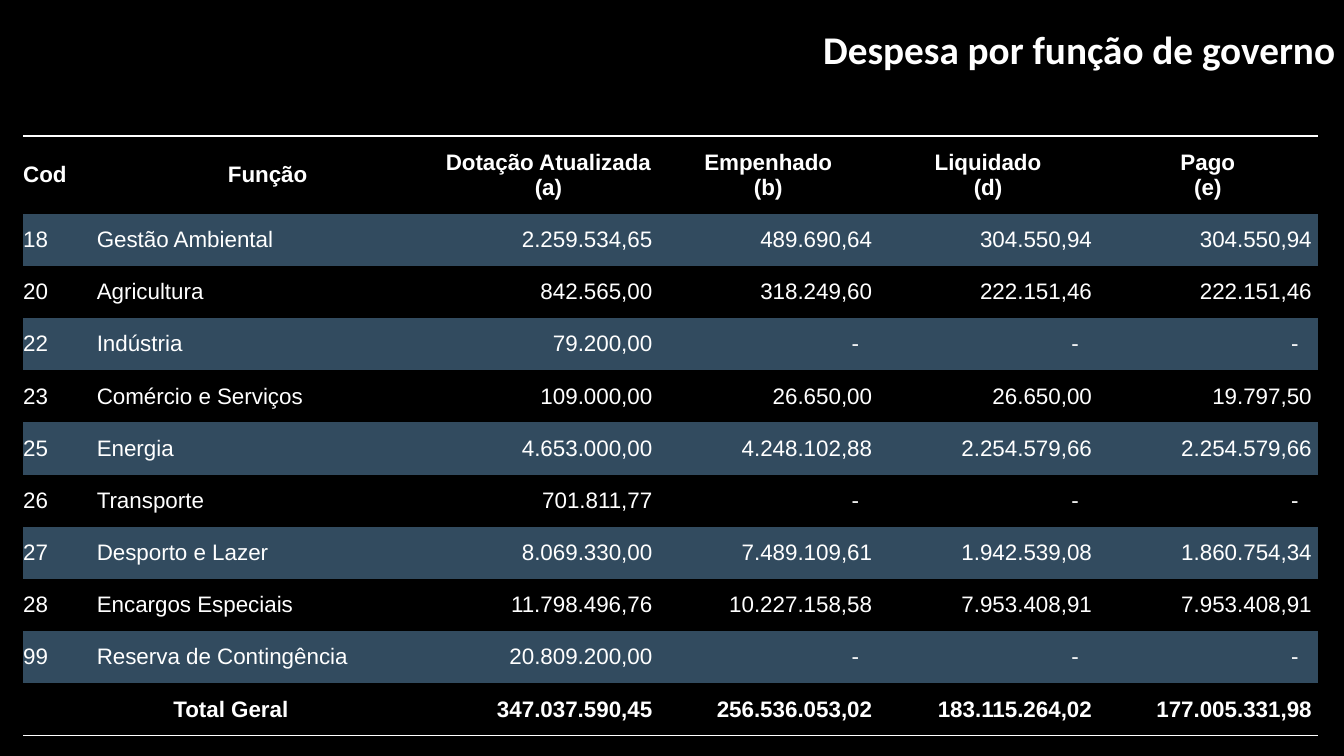
from dataclasses import dataclass

from lxml import etree
from pptx import Presentation
from pptx import util as u
from pptx.dml.color import RGBColor
from pptx.enum import text
from pptx.oxml.ns import qn

LEFT, CENTER, RIGHT = text.PP_ALIGN.LEFT, text.PP_ALIGN.CENTER, text.PP_ALIGN.RIGHT
NO_TABLE_STYLE = "{2D5ABB26-0587-4C30-8999-92F81FD0307C}"

HEADER = ["Cod", "Função", "Dotação Atualizada\n(a)", "Empenhado\n(b)",
          "Liquidado\n(d)", "Pago\n(e)"]
EXPENSES = [
    ["18", "Gestão Ambiental", "2.259.534,65", "489.690,64", "304.550,94", "304.550,94"],
    ["20", "Agricultura", "842.565,00", "318.249,60", "222.151,46", "222.151,46"],
    ["22", "Indústria", "79.200,00", "-", "-", "-"],
    ["23", "Comércio e Serviços", "109.000,00", "26.650,00", "26.650,00", "19.797,50"],
    ["25", "Energia", "4.653.000,00", "4.248.102,88", "2.254.579,66", "2.254.579,66"],
    ["26", "Transporte", "701.811,77", "-", "-", "-"],
    ["27", "Desporto e Lazer", "8.069.330,00", "7.489.109,61", "1.942.539,08",
     "1.860.754,34"],
    ["28", "Encargos Especiais", "11.798.496,76", "10.227.158,58", "7.953.408,91",
     "7.953.408,91"],
    ["99", "Reserva de Contingência", "20.809.200,00", "-", "-", "-"],
]
TOTAL = ["Total Geral", "", "347.037.590,45", "256.536.053,02", "183.115.264,02",
         "177.005.331,98"]
COLUMN_WIDTHS = [0.73, 3.39] + [2.18] * 4
ROW_HEIGHTS = [0.77] + [0.518] * (len(EXPENSES) + 1)


@dataclass(frozen=True)
class Theme:
    background: str = "000000"
    ink: str = "FFFFFF"
    band: str = "324B5F"
    rule: str = "FFFFFF"
    title_font: str = "Calibri"
    table_font: str = "Arial"
    title_size: int = 28
    table_size: int = 16


class SlideBuilder:
    def __init__(self, presentation, theme):
        self.theme = theme
        self.slide = presentation.slides.add_slide(presentation.slide_layouts[5])
        fill = self.slide.background.fill
        fill.solid()
        fill.fore_color.rgb = RGBColor.from_string(theme.background)

    def style(self, paragraph, name, size, bold, alignment):
        paragraph.alignment = alignment
        font = paragraph.font
        font.name, font.size, font.bold = name, u.Pt(size), bold
        font.color.rgb = RGBColor.from_string(self.theme.ink)

    def title(self, wording, left, top, width, height):
        shape = self.slide.shapes.title
        shape.left, shape.top = u.Inches(left), u.Inches(top)
        shape.width, shape.height = u.Inches(width), u.Inches(height)
        frame = shape.text_frame
        frame.text = wording
        frame.auto_size = text.MSO_AUTO_SIZE.NONE
        frame.vertical_anchor = text.MSO_ANCHOR.TOP
        self.style(frame.paragraphs[0], self.theme.title_font,
                   self.theme.title_size, True, RIGHT)

    def rule(self, cell, tag):
        """Draw one border of a cell: a:lnT above or a:lnB below."""
        line = etree.Element(qn(tag), w=str(u.Pt(1)))
        fill = etree.SubElement(line, qn("a:solidFill"))
        etree.SubElement(fill, qn("a:srgbClr"), val=self.theme.rule)
        cell._tc.get_or_add_tcPr().insert(0, line)

    def cell(self, cell, wording, alignment, bold, banded):
        cell.margin_left = cell.margin_top = cell.margin_bottom = 0
        indent = 0
        if alignment == RIGHT:
            indent = 0.19 if wording == "-" else 0.06
        cell.margin_right = u.Inches(indent)
        cell.vertical_anchor = text.MSO_ANCHOR.MIDDLE
        cell.text = wording
        for paragraph in cell.text_frame.paragraphs:
            self.style(paragraph, self.theme.table_font, self.theme.table_size,
                       bold, alignment)
        if banded:
            cell.fill.solid()
            cell.fill.fore_color.rgb = RGBColor.from_string(self.theme.band)
        else:
            cell.fill.background()

    def table(self, rows, left, top, widths, heights):
        """Table with a bold first and last row, ruled above and below."""
        frame = self.slide.shapes.add_table(
            len(rows), len(widths), u.Inches(left), u.Inches(top),
            u.Inches(sum(widths)), u.Inches(sum(heights)))
        table = frame.table
        table.first_row = table.horz_banding = False
        table._tbl.tblPr.find(qn("a:tableStyleId")).text = NO_TABLE_STYLE
        for column, width in zip(table.columns, widths):
            column.width = u.Inches(width)
        for row, height in zip(table.rows, heights):
            row.height = u.Inches(height)

        last = len(rows) - 1
        table.cell(last, 0).merge(table.cell(last, 1))
        for i, row in enumerate(rows):
            for j, wording in enumerate(row):
                cell = table.cell(i, j)
                alignment = LEFT if j < 2 else RIGHT
                if (i == 0 and j > 0) or (i == last and j < 2):
                    alignment = CENTER
                self.cell(cell, wording, alignment, i in (0, last), i % 2 == 1)
                if i == 0:
                    self.rule(cell, "a:lnT")
                elif i == last:
                    self.rule(cell, "a:lnB")


def main():
    presentation = Presentation()
    presentation.slide_width = u.Inches(13.33)
    presentation.slide_height = u.Inches(7.5)
    builder = SlideBuilder(presentation, Theme())
    builder.title("Despesa por função de governo", 4.91, 0.2, 8.43, 0.57)
    builder.table([HEADER, *EXPENSES, TOTAL], 0.23, 1.35, COLUMN_WIDTHS, ROW_HEIGHTS)
    presentation.save("out.pptx")


if __name__ == "__main__":
    main()
